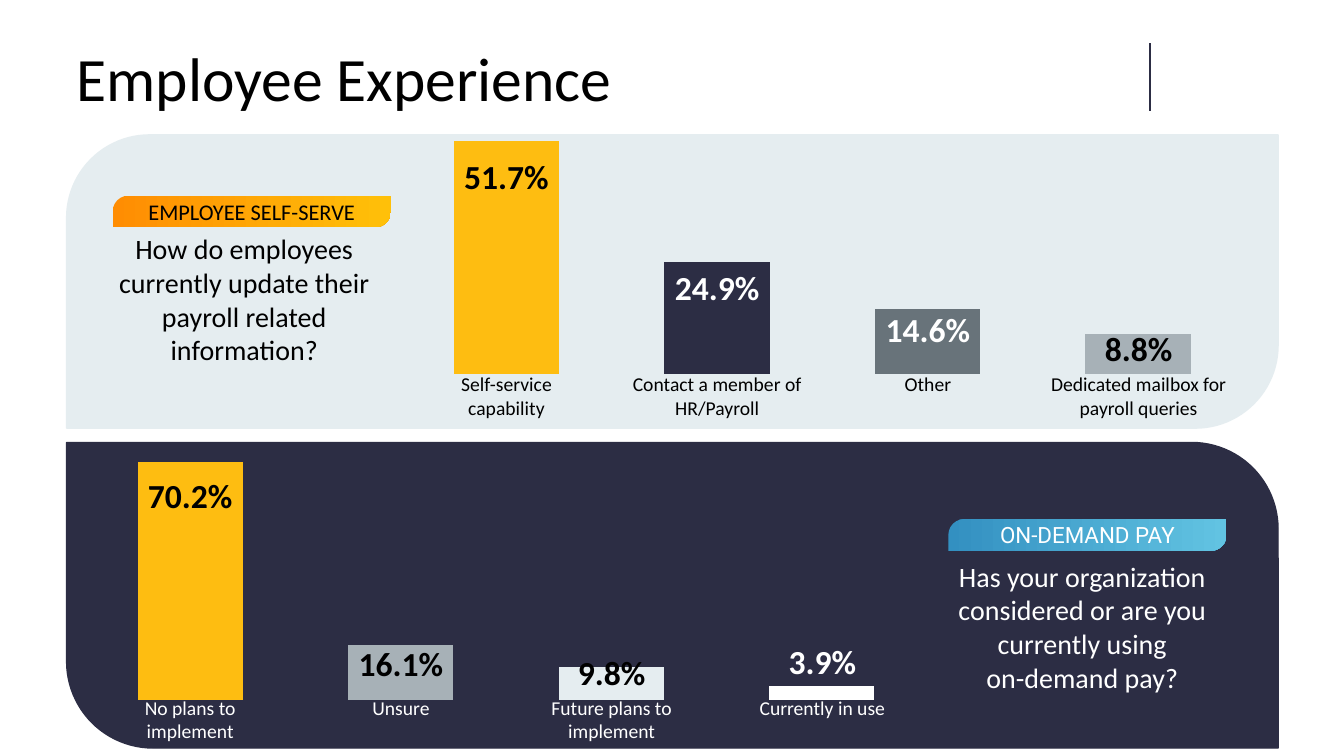
"""Build the employee experience slide with two survey panels."""
from dataclasses import dataclass

from lxml import etree
from pptx import Presentation
from pptx.chart.data import CategoryChartData
from pptx.dml.color import RGBColor
from pptx.enum.chart import XL_CHART_TYPE as ChartType
from pptx.enum.shapes import MSO_CONNECTOR as Connector, MSO_SHAPE as Shape
from pptx.enum.text import MSO_ANCHOR as Anchor, PP_ALIGN as Align
from pptx.oxml import parse_xml
from pptx.oxml.ns import nsdecls, qn
from pptx.slide import Slide
from pptx.util import Cm, Pt

BLACK, WHITE, NAVY, MIST = "000000", "FFFFFF", "2C2D44", "E5EDF0"
AMBER, SILVER, SLATE = "FEBD11", "A7B1B7", "68737A"
FONT = "Calibri"
PANEL_X, PANEL_W = 1.68, 30.53
CHART_W, CHART_H = 22.15, 7.11
PLOT_INSET, PITCH = 0.46, 5.31
PLOT_BOTTOM = 0.98


@dataclass
class Box:
    x: float
    y: float
    w: float
    h: float

    def lengths(self) -> tuple[Cm, Cm, Cm, Cm]:
        return Cm(self.x), Cm(self.y), Cm(self.w), Cm(self.h)


@dataclass
class Bar:
    height: int
    color: str
    percent: str
    percent_y: float
    percent_color: str
    label: str
    label_w: float = 5.38


@dataclass
class Tag:
    text: str
    box: Box
    start: str
    end: str
    font: str


@dataclass
class Panel:
    y: float
    h: float
    corners: tuple[float, float]
    fill: str
    ink: str
    chart_x: float
    chart_y: float
    plot_h: float
    label_y: float
    bars: list[Bar]
    question: list[str]
    question_box: Box
    tag: Tag


PANELS = [
    Panel(3.4, 7.39, (0.283, 0), MIST, BLACK, 9.65, 2.46, 0.825, 9.25,
          [Bar(100, AMBER, "51.7%", 3.81, BLACK, "Self-service capability", 4.55),
           Bar(48, NAVY, "24.9%", 6.6, WHITE, "Contact a member of HR/Payroll"),
           Bar(28, SLATE, "14.6%", 7.67, WHITE, "Other"),
           Bar(17, SILVER, "8.8%", 8.13, BLACK,
               "Dedicated mailbox for payroll queries")],
          ["How do employees currently update their payroll related information?"],
          Box(2.46, 5.72, 7.39, 4.52),
          Tag("EMPLOYEE SELF-SERVE", Box(2.84, 4.93, 7.01, 0.8),
              "FF8D02", "FFC009", FONT)),
    Panel(11.15, 7.7, (0, 0.283), NAVY, WHITE, 1.68, 10.67, 0.843, 17.4,
          [Bar(100, AMBER, "70.2%", 11.84, BLACK, "No plans to implement", 4.55),
           Bar(23, SILVER, "16.1%", 16.08, BLACK, "Unsure"),
           Bar(14, MIST, "9.8%", 16.31, BLACK, "Future plans to implement"),
           Bar(6, WHITE, "3.9%", 16.03, WHITE, "Currently in use")],
          ["Has your organization considered or are you currently using",
           "on-demand pay?"],
          Box(23.06, 13.97, 8.43, 3.68),
          Tag("ON-DEMAND PAY", Box(23.9, 13.08, 7.01, 0.8),
              "3390C1", "62C3E2", "Roboto")),
]


def rgb(color: str) -> RGBColor:
    return RGBColor.from_string(color)


def write(tf, lines: list[str], size: int, color: str, font: str = FONT,
          bold: bool = False, align: Align = Align.CENTER) -> None:
    for i, line in enumerate(lines):
        p = tf.add_paragraph() if i else tf.paragraphs[0]
        p.alignment = align
        r = p.add_run()
        r.text = line
        r.font.name, r.font.size, r.font.bold = font, Pt(size), bold
        r.font.color.rgb = rgb(color)


def add_text(s: Slide, box: Box, lines: list[str], size: int, color: str,
             bold: bool = False, align: Align = Align.CENTER, wrap: bool = True):
    tf = s.shapes.add_textbox(*box.lengths()).text_frame
    tf.word_wrap = wrap
    write(tf, lines, size, color, bold=bold, align=align)
    return tf


def add_diagonal(s: Slide, box: Box, corners: tuple[float, float]):
    sp = s.shapes.add_shape(Shape.ROUND_2_DIAG_RECTANGLE, *box.lengths())
    sp.shadow.inherit = False
    sp.adjustments[0], sp.adjustments[1] = corners
    return sp


def add_tag(s: Slide, tag: Tag, color: str) -> None:
    sp = add_diagonal(s, tag.box, (0.5, 0))
    sp.line.fill.background()
    sp.fill.gradient()
    sp.fill.gradient_angle = 0
    for stop, stop_color in zip(sp.fill.gradient_stops, (tag.start, tag.end)):
        stop.color.rgb = rgb(stop_color)
    sp.text_frame.vertical_anchor = Anchor.MIDDLE
    write(sp.text_frame, [tag.text], 16, color, tag.font)


def add_bars(s: Slide, panel: Panel) -> None:
    data = CategoryChartData()
    data.categories = [bar.label for bar in panel.bars]
    data.add_series("Series 1", [bar.height for bar in panel.bars])
    box = Box(panel.chart_x, panel.chart_y, CHART_W, CHART_H)
    chart = s.shapes.add_chart(ChartType.COLUMN_CLUSTERED, *box.lengths(), data).chart
    chart.has_legend = chart.has_title = False
    chart.font.name, chart.font.size = FONT, Pt(10)
    chart.font.color.rgb = rgb(BLACK)
    for axis in (chart.category_axis, chart.value_axis):
        axis.visible = axis.has_major_gridlines = False
    chart.value_axis.minimum_scale, chart.value_axis.maximum_scale = 0, 100
    plot = chart.plots[0]
    plot.gap_width, plot.overlap, plot.vary_by_categories = 100, -24, False
    for i, bar in enumerate(panel.bars):
        fill = plot.series[0].points[i].format.fill
        fill.solid()
        fill.fore_color.rgb = rgb(bar.color)
    set_plot_area(chart, panel.plot_h)


def set_plot_area(chart, height: float) -> None:
    inset = PLOT_INSET / CHART_W
    sizes = {"x": inset, "y": PLOT_BOTTOM - height, "w": 1 - 2 * inset, "h": height}
    area = chart.plots[0]._element.getparent()
    for old in area.findall(qn("c:layout")):
        area.remove(old)
    layout = parse_xml(f"<c:layout {nsdecls('c')}><c:manualLayout>"
                       '<c:layoutTarget val="inner"/><c:xMode val="edge"/>'
                       '<c:yMode val="edge"/></c:manualLayout></c:layout>')
    for name, value in sizes.items():
        etree.SubElement(layout[0], qn(f"c:{name}")).set("val", f"{value:.3f}")
    area.insert(0, layout)


def add_panel(s: Slide, panel: Panel) -> None:
    sp = add_diagonal(s, Box(PANEL_X, panel.y, PANEL_W, panel.h), panel.corners)
    sp.fill.solid()
    sp.fill.fore_color.rgb = sp.line.color.rgb = rgb(panel.fill)
    sp.line.width = Pt(1)
    add_bars(s, panel)
    add_text(s, panel.question_box, panel.question, 20, panel.ink)
    add_tag(s, panel.tag, panel.ink)
    for i, bar in enumerate(panel.bars):
        center = panel.chart_x + PLOT_INSET + (i + 0.5) * PITCH
        add_text(s, Box(center - 1.33, bar.percent_y, 2.66, 1.27), [bar.percent],
                 24, bar.percent_color, bold=True, wrap=False)
        add_text(s, Box(center - bar.label_w / 2, panel.label_y, bar.label_w, 1.45),
                 [bar.label], 14, panel.ink)


def main() -> None:
    prs = Presentation()
    prs.slide_width, prs.slide_height = Cm(33.87), Cm(19.05)
    s = prs.slides.add_slide(prs.slide_layouts[6])
    tf = add_text(s, Box(PANEL_X, 1.09, 27.64, 1.96), ["Employee Experience"],
                  44, BLACK, align=Align.LEFT)
    tf.paragraphs[0].line_spacing = 0.9
    for panel in PANELS:
        add_panel(s, panel)
    rule = s.shapes.add_connector(Connector.STRAIGHT, Cm(28.98), Cm(1.09),
                                  Cm(28.98), Cm(2.79))
    rule.line.color.rgb, rule.line.width = rgb(NAVY), Pt(1)
    etree.SubElement(rule._element.spPr, qn("a:effectLst"))
    prs.save("out.pptx")


if __name__ == "__main__":
    main()
